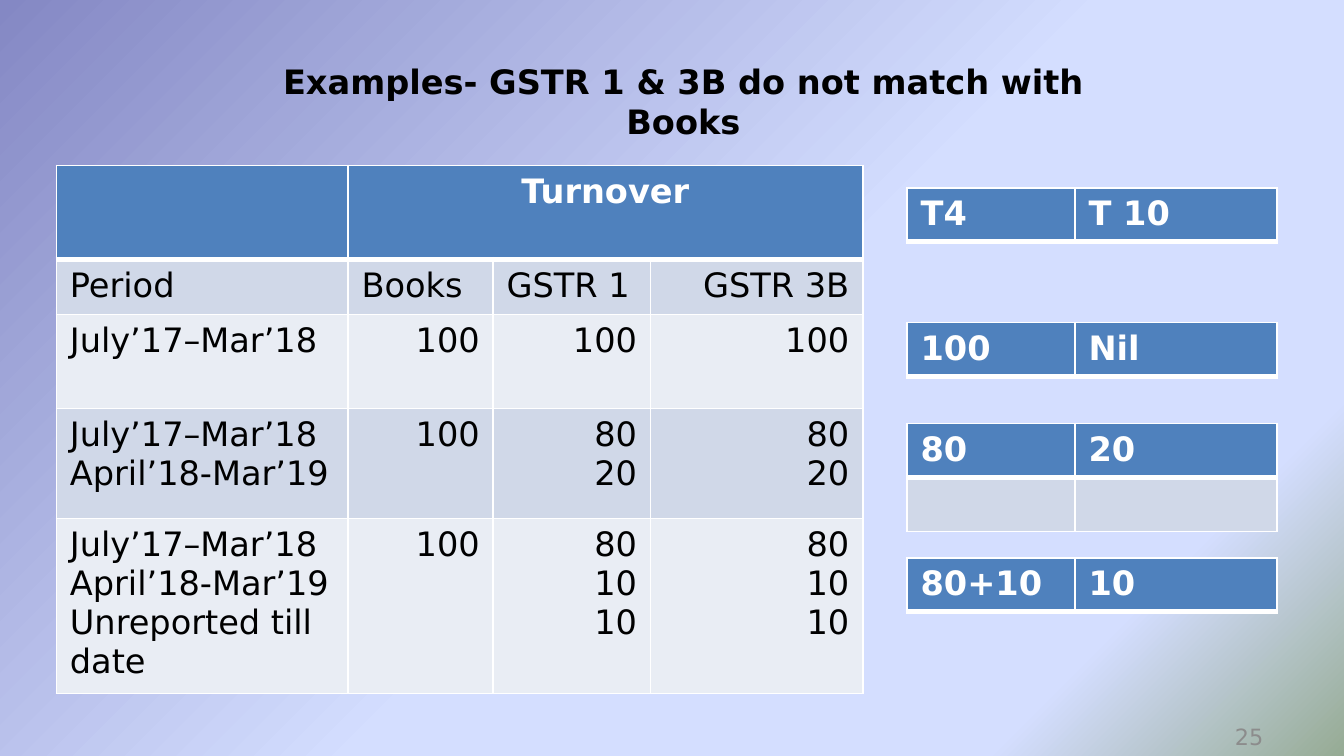
from pptx import Presentation
from pptx.dml.color import RGBColor
from pptx.enum.text import MSO_ANCHOR, MSO_AUTO_SIZE, PP_ALIGN
from pptx.oxml import parse_xml
from pptx.oxml.ns import nsdecls, qn
from pptx.util import Inches, Pt

HEAD, DARK, LIGHT = "4F81BD", "D0D8E8", "E9EDF4"
WHITE, BLACK, GRAY = "FFFFFF", "000000", "8C8C8C"
LEFT, MID, RIGHT, JUST = PP_ALIGN.LEFT, PP_ALIGN.CENTER, PP_ALIGN.RIGHT, PP_ALIGN.JUSTIFY


def color(code):
    return RGBColor.from_string(code)


def write(frame, text, size=18, tint=BLACK, bold=False, align=LEFT, font="DejaVu Sans"):
    for i, line in enumerate(text.split("\n")):
        para = frame.paragraphs[0] if i == 0 else frame.add_paragraph()
        para.alignment = align
        para.font.size = Pt(size)
        if not line:
            continue
        run = para.add_run()
        run.text = line
        run.font.name = font
        run.font.size = Pt(size)
        run.font.bold = bold
        run.font.color.rgb = color(tint)


class Deck:
    def __init__(self, width, height):
        self.prs = Presentation()
        self.prs.slide_width = Inches(width)
        self.prs.slide_height = Inches(height)
        self.slide = self.prs.slides.add_slide(self.prs.slide_layouts[5])

    def back(self, stops, angle):
        self.slide.background.fill.gradient()
        grad = self.slide.element.find(".//" + qn("a:gradFill"))
        for child in list(grad):
            grad.remove(child)
        marks = "".join(
            f'<a:gs pos="{at * 1000}"><a:srgbClr val="{code}"/></a:gs>' for at, code in stops
        )
        grad.append(parse_xml(f'<a:gsLst {nsdecls("a")}>{marks}</a:gsLst>'))
        grad.append(parse_xml(f'<a:lin {nsdecls("a")} ang="{angle * 60000}" scaled="0"/>'))

    def place(self, shape, box, anchor):
        shape.left, shape.top, shape.width, shape.height = map(Inches, box)
        frame = shape.text_frame
        frame.word_wrap = True
        frame.auto_size = MSO_AUTO_SIZE.NONE
        frame.vertical_anchor = anchor
        return frame

    def title(self, text, box):
        frame = self.place(self.slide.shapes.title, box, MSO_ANCHOR.TOP)
        write(frame, text, bold=True, align=MID)

    def label(self, text, box, **style):
        shape = self.slide.shapes.add_textbox(*map(Inches, box))
        write(self.place(shape, box, MSO_ANCHOR.MIDDLE), text, **style)

    def edge(self, cell, row):
        props = cell._tc.get_or_add_tcPr()
        sides = {"L": 1, "R": 1, "T": 3 if row == 1 else 1, "B": 3 if row == 0 else 1}
        for side, width in sides.items():
            props.append(parse_xml(
                f'<a:ln{side} {nsdecls("a")} w="{Pt(width)}"><a:solidFill>'
                f'<a:srgbClr val="{WHITE}"/></a:solidFill></a:ln{side}>'
            ))

    def table(self, left, top, cols, rows, data, align):
        shape = self.slide.shapes.add_table(
            len(rows), len(cols), Inches(left), Inches(top), Inches(sum(cols)), Inches(sum(rows))
        )
        grid = shape.table
        for col, width in zip(grid.columns, cols):
            col.width = Inches(width)
        for row, height in zip(grid.rows, rows):
            row.height = Inches(height)
        for r, line in enumerate(data):
            fill = HEAD if r == 0 else DARK if r % 2 else LIGHT
            for c, text in enumerate(line):
                cell = grid.cell(r, c)
                self.edge(cell, r)
                cell.fill.solid()
                cell.fill.fore_color.rgb = color(fill)
                write(cell.text_frame, text, tint=BLACK if r else WHITE,
                      bold=r == 0, align=align(r, c))
        return grid

    def save(self):
        self.prs.save("out.pptx")


def turn_align(row, col):
    if row == 0:
        return MID
    if col == 0:
        return LEFT
    return JUST if row == 1 and col < 3 else RIGHT


def main():
    deck = Deck(10, 10 * 9 / 16)
    deck.back([(0, "8488C4"), (53, "D4DEFF"), (83, "D4DEFF"), (100, "96AB94")], 45)
    deck.label("25", (7.17, 5.33, 2.33, 0.3), size=12, tint=GRAY, align=RIGHT)
    deck.title("Examples- GSTR 1 & 3B do not match with Books", (1.92, 0.4, 6.33, 0.71))

    first, next_ = "July’17–Mar’18", "April’18-Mar’19"
    data = [
        ["", "Turnover", "", ""],
        ["Period", "Books ", "GSTR 1", "GSTR 3B"],
        [first, "100", "100", "100"],
        [f"{first}\n{next_}", "100", "80\n20", "80\n20"],
        [f"{first}\n{next_}\nUnreported till date", "100", "80\n10\n10", "80\n10\n10"],
    ]
    grid = deck.table(0.42, 1.23, [2.17, 1.08, 1.17, 1.58],
                      [0.7, 0.41, 0.7, 0.82, 1.3], data, turn_align)
    grid.cell(0, 1).merge(grid.cell(0, 3))

    sides = [
        (1.4, [["T4", "T 10"]]),
        (2.4, [["100", "Nil"]]),
        (3.15, [["80", "20"], ["", ""]]),
        (4.15, [["80+10", "10"]]),
    ]
    for top, pairs in sides:
        deck.table(6.75, top, [1.25, 1.5], [0.4] * len(pairs), pairs, lambda r, c: LEFT)
    deck.save()


if __name__ == "__main__":
    main()
